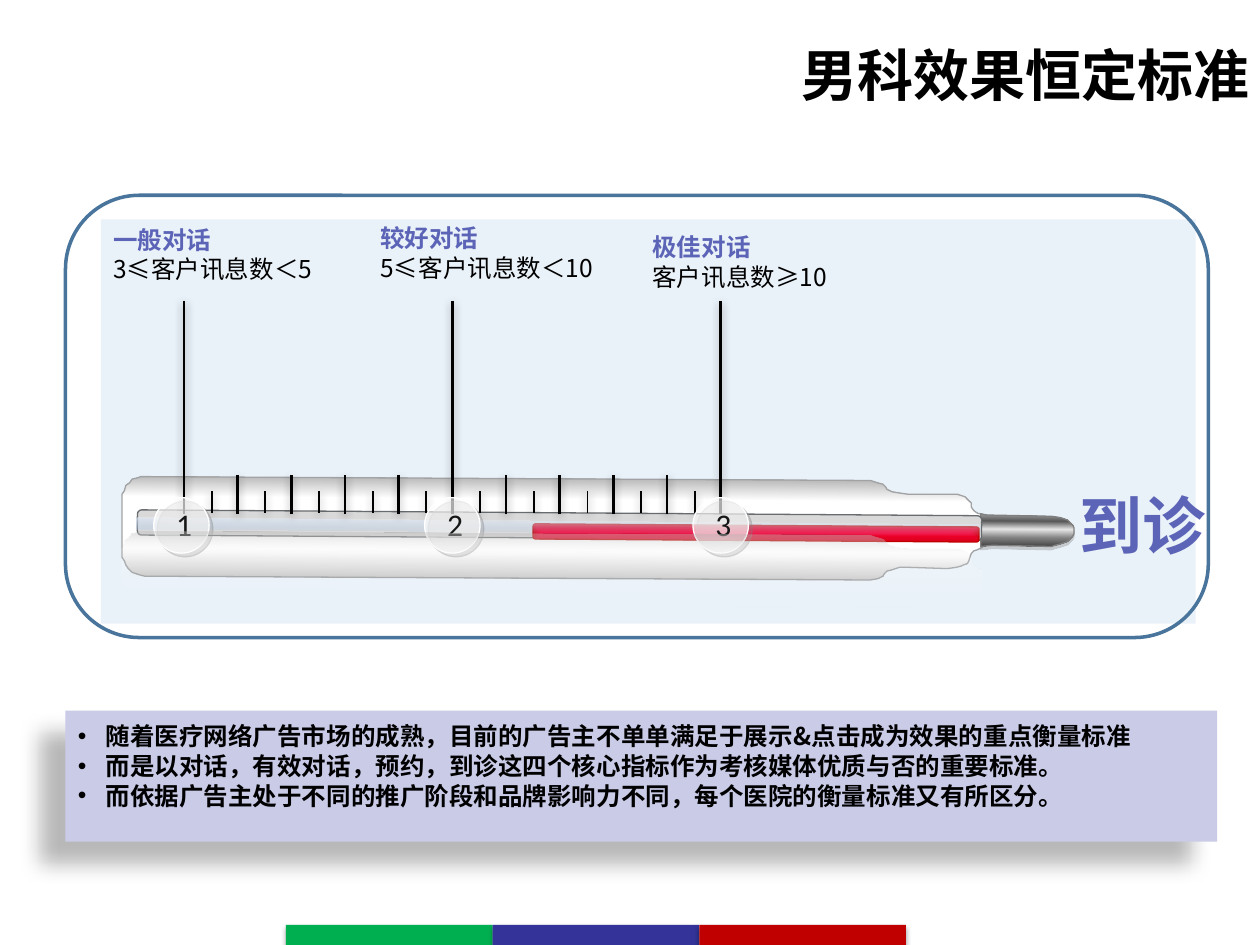
import math
from dataclasses import dataclass
from typing import Any, Optional

import lxml.etree
import pptx
import pptx.dml.color
import pptx.enum.shapes
import pptx.enum.text
import pptx.oxml.ns
import pptx.util

SCALE = 9144
TURN = 90.4
KIND = pptx.enum.shapes.MSO_SHAPE
ALIGN = pptx.enum.text.PP_ALIGN
MID = pptx.enum.text.MSO_ANCHOR.MIDDLE
qn = pptx.oxml.ns.qn


@dataclass(frozen=True)
class Theme:
    sans: str = "Noto Sans CJK SC"
    latin: str = "Calibri"
    black: str = "000000"
    white: str = "FFFFFF"
    accent: str = "5C64B7"
    digit: str = "151616"
    panel: str = "629DD1"
    frame: str = "49749B"
    note: str = "C9CBE7"
    tube: str = "D9D9D9"
    edge: str = "696C6F"
    rim: str = "A0A2A4"
    metal: str = "7F7F7F"
    red: str = "C00000"
    shade: str = "808080"
    bars: tuple = ("00B050", "333399", "C00000")
    title: int = 32
    goal: int = 36
    count: int = 18
    body: int = 14
    lead: int = 17


@dataclass(frozen=True)
class Box:
    x: int
    y: int
    w: int
    h: int


@dataclass(frozen=True)
class Stop:
    pos: int
    color: str
    alpha: int = 100


@dataclass(frozen=True)
class Shadow:
    color: str
    alpha: int
    blur: float
    dist: float
    angle: int


@dataclass(frozen=True)
class Stage:
    name: str
    rule: str
    label: Box
    dot: int


THEME = Theme()
BODY = [
    (770, 442), (769, 445), (768, 447), (765, 448), (763, 449), (759, 450), (752, 451),
    (721, 450), (714, 450), (708, 452), (704, 453), (702, 455), (701, 457), (699, 458),
    (697, 459), (691, 460), (684, 460), (115, 457), (111, 456), (108, 455), (105, 454),
    (102, 451), (100, 448), (99, 445), (97, 442), (97, 396), (97, 392), (99, 389),
    (100, 385), (103, 383), (105, 380), (109, 379), (112, 378), (116, 378), (684, 381),
    (691, 381), (697, 383), (701, 384), (703, 386), (704, 388), (706, 389), (708, 390),
    (714, 391), (721, 392), (752, 392), (760, 392), (763, 393), (766, 394), (768, 396),
    (769, 397), (771, 399), (771, 402), (773, 405), (776, 407), (780, 408), (780, 434),
    (776, 436), (773, 437), (771, 439)]
TIP = [
    (778, 408), (783, 409), (834, 410), (841, 411), (844, 412), (847, 413), (849, 415),
    (851, 417), (852, 419), (852, 424), (851, 426), (849, 428), (847, 430), (844, 431),
    (841, 432), (837, 433), (834, 434), (787, 433), (778, 434)]
STAGES = [
    Stage("一般对话", "3≤客户讯息数＜5", Box(80, 170, 216, 57), 122),
    Stage("较好对话", "5≤客户讯息数＜10", Box(292, 169, 216, 79), 337),
    Stage("极佳对话", "客户讯息数≥10", Box(508, 176, 217, 57), 550)]
NOTES = [
    "随着医疗网络广告市场的成熟，目前的广告主不单单满足于展示&点击成为效果的重点衡量标准",
    "而是以对话，有效对话，预约，到诊这四个核心指标作为考核媒体优质与否的重要标准。",
    "而依据广告主处于不同的推广阶段和品牌影响力不同，每个医院的衡量标准又有所区分。"]


def px(size: float) -> int:
    return round(size * SCALE)


def rgb(color: str) -> Any:
    return pptx.dml.color.RGBColor.from_string(color)


def node(root: Any, tag: str, **attrs: Any) -> Any:
    return lxml.etree.SubElement(root, qn(tag), {k: str(v) for k, v in attrs.items()})


def tint(root: Any, color: str, alpha: int) -> None:
    node(node(root, "a:srgbClr", val=color), "a:alpha", val=alpha * 1000)


def cast(shape: Any, shadow: Optional[Shadow]) -> None:
    props = shape._element.spPr
    for old in props.findall(qn("a:effectLst")):
        props.remove(old)
    root = node(props, "a:effectLst")
    if shadow:
        drop = node(root, "a:outerShdw", blurRad=round(shadow.blur * 12700),
                    dist=round(shadow.dist * 12700), dir=shadow.angle * 60000,
                    algn="ctr", rotWithShape=0)
        tint(drop, shadow.color, shadow.alpha)


def blend(shape: Any, stops: list[Stop], angle: Optional[int]) -> None:
    grad = lxml.etree.Element(qn("a:gradFill"), {"rotWithShape": "1"})
    chain = node(grad, "a:gsLst")
    for stop in stops:
        tint(node(chain, "a:gs", pos=stop.pos * 1000), stop.color, stop.alpha)
    if angle is None:
        node(node(grad, "a:path", path="shape"), "a:fillToRect",
             l=50000, t=50000, r=50000, b=50000)
    else:
        node(grad, "a:lin", ang=angle * 60000, scaled=0)
    shape._element.spPr.insert(2, grad)


def style(shape: Any, fill: Any = None, line: str = "", width: float = 0.75,
          alpha: int = 100, angle: Optional[int] = 0, shadow: Optional[Shadow] = None) -> None:
    shape.shadow.inherit = False
    if isinstance(fill, list):
        blend(shape, fill, angle)
    elif fill:
        shape.fill.solid()
        shape.fill.fore_color.rgb = rgb(fill)
        for color in shape._element.spPr.findall(qn("a:solidFill") + "/" + qn("a:srgbClr")):
            node(color, "a:alpha", val=alpha * 1000)
    else:
        shape.fill.background()
    if line:
        shape.line.color.rgb = rgb(line)
        shape.line.width = pptx.util.Pt(width)
    else:
        shape.line.fill.background()
    cast(shape, shadow)


def block(shapes: Any, kind: Any, box: Box, turn: float = 0, **look: Any) -> Any:
    shape = shapes.add_shape(kind, px(box.x), px(box.y), px(box.w), px(box.h))
    shape.rotation = turn
    style(shape, **look)
    return shape


def trace(shapes: Any, points: list, mid: tuple, drop: int = 0, **look: Any) -> None:
    cos, sin = math.cos(math.radians(TURN)), math.sin(math.radians(TURN))
    cx, cy = mid
    spots = [(px(cx + (x - cx) * cos + (y - cy) * sin),
              px(cy + drop - (x - cx) * sin + (y - cy) * cos)) for x, y in points]
    pen = shapes.build_freeform(*spots[0])
    pen.add_line_segments(spots[1:], close=True)
    shape = pen.convert_to_shape()
    shape.rotation = TURN
    style(shape, **look)


def tick(shapes: Any, x: float, start: int, end: int, width: float) -> None:
    line = shapes.add_connector(pptx.enum.shapes.MSO_CONNECTOR.STRAIGHT,
                                px(x), px(start), px(x), px(end))
    line.line.color.rgb = rgb(THEME.black)
    line.line.width = pptx.util.Pt(width)
    cast(line, Shadow(THEME.black, 38, 5, 1.6, 90))


def write(frame: Any, lines: list[str], size: int, color: str, bold: bool = True,
          face: str = THEME.sans, align: Any = ALIGN.LEFT) -> None:
    frame.text = "\n".join(lines)
    for para in frame.paragraphs:
        para.alignment = align
        if size == THEME.body:
            para.line_spacing = pptx.util.Pt(THEME.lead)
        for run in para.runs:
            font = run.font
            font.name, font.size, font.bold = face, pptx.util.Pt(size), bold
            font.color.rgb = rgb(color)
            node(run._r.get_or_add_rPr(), "a:ea", typeface=face)


def label(shapes: Any, box: Box, wrap: bool = True) -> Any:
    frame = shapes.add_textbox(px(box.x), px(box.y), px(box.w), px(box.h)).text_frame
    frame.word_wrap = wrap
    return frame


def gauge(shapes: Any) -> None:
    mid = (438.5, 419.5)
    trace(shapes, BODY, mid, line=THEME.rim, fill=[
        Stop(0, "A6A6A6"), Stop(24, THEME.white), Stop(69, THEME.white), Stop(100, "BFBFBF")])
    trace(shapes, TIP, (815, 421), line=THEME.metal, shadow=Shadow(THEME.shade, 35, 0, 1.8, 90),
          fill=[Stop(0, "A6A6A6"), Stop(23, "595959"), Stop(47, "E6E6E6"),
                Stop(73, THEME.metal), Stop(100, "404040")])
    block(shapes, KIND.ROUNDED_RECTANGLE, Box(434, 82, 20, 670), TURN,
          fill=THEME.tube, line=THEME.edge)
    block(shapes, KIND.ROUNDED_RECTANGLE, Box(594, 246, 12, 354), TURN, angle=None,
          fill=[Stop(0, "FB0036"), Stop(100, "D60015")], line=THEME.red)
    block(shapes, KIND.ROUNDED_RECTANGLE, Box(439, 83, 9, 670), TURN, angle=180,
          fill=[Stop(0, "8EB4E3", 0), Stop(100, THEME.white)])
    ruler = shapes.add_group_shape().shapes
    for i in range(11):
        tick(ruler, 146 + 42.6 * i, 408, 377 if i % 5 else 239, 1.5)
    for i in range(10):
        tick(ruler, 168 + 42.6 * i, 390, 407, 1)


def badge(shapes: Any, stage: Stage, count: int) -> None:
    group = shapes.add_group_shape().shapes
    block(group, KIND.OVAL, Box(stage.dot, 395, 44, 44), fill=THEME.white, alpha=62,
          line=THEME.white, shadow=Shadow(THEME.shade, 40, 0, 3, 45))
    frame = label(group, Box(stage.dot + 8, 396, 33, 40), False)
    write(frame, [str(count)], THEME.count, THEME.digit, False, THEME.latin)


def notes(shapes: Any) -> None:
    shape = block(shapes, KIND.RECTANGLE, Box(52, 564, 914, 104), fill=THEME.note,
                  shadow=Shadow(THEME.black, 28, 11.8, 19.7, 141))
    frame = shape.text_frame
    frame.word_wrap = True
    frame.vertical_anchor = pptx.enum.text.MSO_ANCHOR.TOP
    frame.margin_top = px(8)
    write(frame, NOTES, THEME.body, THEME.black)
    for para in frame.paragraphs:
        props = para._p.get_or_add_pPr()
        props.set("marL", str(px(22)))
        props.set("indent", str(-px(22)))
        node(props, "a:buFont", typeface="Arial")
        node(props, "a:buChar", char="•")


def main() -> None:
    deck = pptx.Presentation()
    deck.slide_width, deck.slide_height = px(1000), px(750)
    shapes = deck.slides.add_slide(deck.slide_layouts[6]).shapes
    block(shapes, KIND.RECTANGLE, Box(80, 174, 869, 321), fill=THEME.panel, alpha=13)
    gauge(shapes)
    for stage in STAGES:
        frame = label(shapes, stage.label)
        frame.margin_top = px(8)
        write(frame, [stage.name, stage.rule], THEME.body, THEME.black, False)
        head = frame.paragraphs[0].runs[0].font
        head.bold, head.color.rgb = True, rgb(THEME.accent)
    for count, stage in enumerate(STAGES, 1):
        badge(shapes, stage, count)
    goal = label(shapes, Box(854, 395, 105, 42))
    goal.margin_left = goal.margin_right = goal.margin_top = goal.margin_bottom = 0
    goal.vertical_anchor = MID
    write(goal, ["到诊"], THEME.goal, THEME.accent, align=ALIGN.CENTER)
    trace(shapes, BODY, (438.5, 419.5), 44, fill=[
        Stop(0, "A6A6A6", 58), Stop(24, THEME.white, 16),
        Stop(69, THEME.white, 0), Stop(100, THEME.white, 0)])
    title = label(shapes, Box(80, 0, 922, 117))
    title.vertical_anchor = MID
    write(title, ["男科效果恒定标准"], THEME.title, THEME.black, align=ALIGN.RIGHT)
    notes(shapes)
    block(shapes, KIND.ROUNDED_RECTANGLE, Box(52, 155, 907, 351), line=THEME.frame, width=2)
    strip = shapes.add_group_shape().shapes
    for i, color in enumerate(THEME.bars):
        block(strip, KIND.RECTANGLE, Box(227 + 164 * i, 734, 164, 16), fill=color,
              shadow=Shadow(THEME.black, 35, 3.1, 1.8, 90))
    deck.save("out.pptx")


if __name__ == "__main__":
    main()
